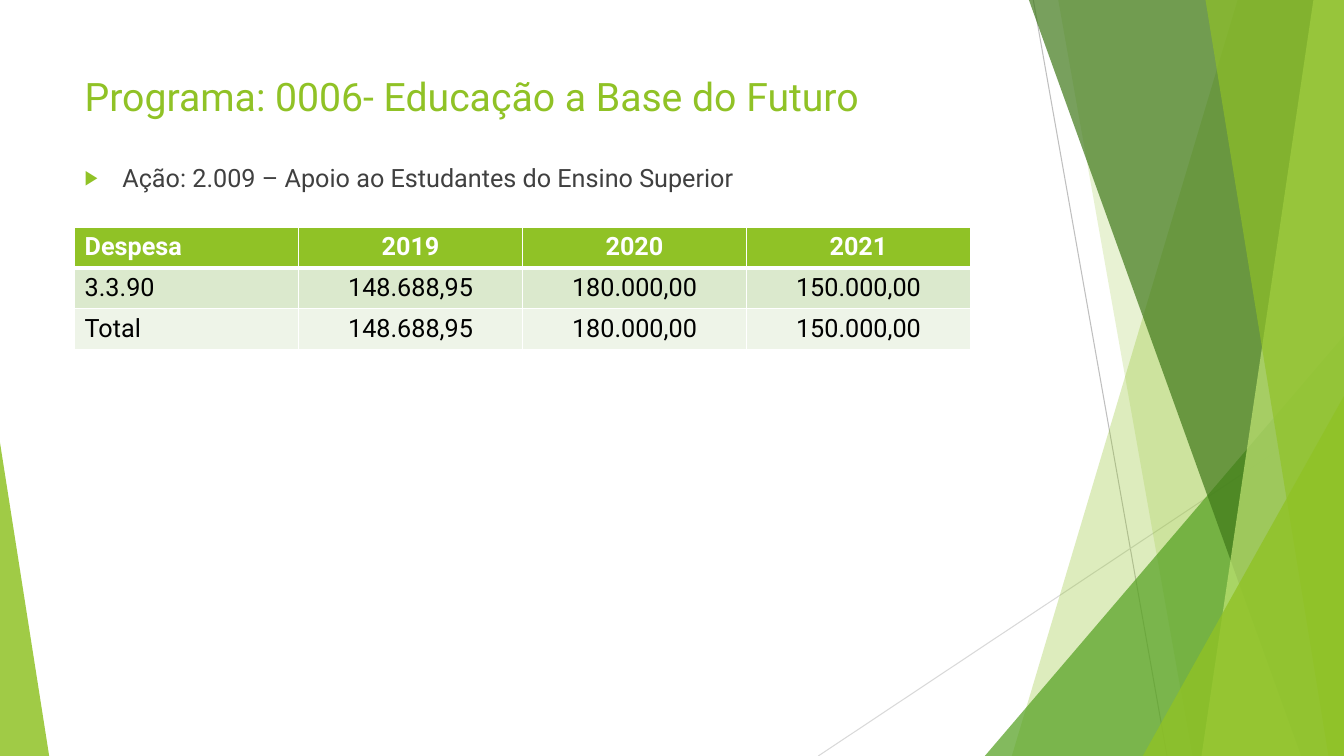
from dataclasses import dataclass
from lxml.etree import SubElement
from pptx import Presentation
from pptx.dml.color import RGBColor
from pptx.enum.shapes import MSO_CONNECTOR, MSO_SHAPE
from pptx.enum.text import MSO_ANCHOR, PP_ALIGN
from pptx.oxml.ns import qn
from pptx.util import Cm, Pt


@dataclass(frozen=True)
class Theme:
    font: str = "Roboto"
    lime: str = "90C226"
    leaf: str = "54A021"
    forest: str = "3F7819"
    pale: str = "C0E474"
    ink: str = "404040"
    black: str = "000000"
    white: str = "FFFFFF"
    band_dark: str = "DBE9CD"
    band_light: str = "EEF4E8"
    title_size: int = 28
    text_size: int = 18


def style_paragraph(para, size, color, bold=False, align=PP_ALIGN.LEFT):
    para.alignment = align
    para.font.name = theme.font
    para.font.size = Pt(size)
    para.font.bold = bold
    para.font.color.rgb = RGBColor.from_string(color)


theme = Theme()
WIDTH, HEIGHT = 33.87, 19.05
deck = Presentation()
deck.slide_width, deck.slide_height = Cm(WIDTH), Cm(HEIGHT)
page = deck.slides.add_slide(deck.slide_layouts[1])

for start_x, start_y, end_x, color in [
    (26.04, 0, 29.41, "BFBFBF"),
    (WIDTH, 10.24, 20.62, "D9D9D9"),
]:
    line = page.shapes.add_connector(
        MSO_CONNECTOR.STRAIGHT, Cm(start_x), Cm(start_y), Cm(end_x), Cm(HEIGHT)
    )
    line.line.color.rgb = RGBColor.from_string(color)
    line.line.width = Pt(0.75)
    SubElement(line._element.spPr, qn("a:effectLst"))

facets = [
    ("pane", (31.19, 25.5), theme.lime, 30),
    ("pane", (26.67, 30.05), theme.lime, 20),
    ("wedge", (24.82, 8.46, WIDTH, 1), theme.leaf, 72),
    ("pane", (25.93, 32.79), theme.forest, 70),
    ("pane", (33.1, 30.28), theme.pale, 70),
    ("pane", (30.38, 33.48), theme.lime, 65),
    ("wedge", (28.8, 9.98, WIDTH, 1), theme.lime, 80),
    ("wedge", (0, 11.15, 1.24, 0), theme.lime, 85),
]
for kind, outline, color, opacity in facets:
    if kind == "pane":
        top_x, bottom_x = outline
        builder = page.shapes.build_freeform(Cm(top_x), 0)
        corners = [(WIDTH, 0), (WIDTH, HEIGHT), (bottom_x, HEIGHT)]
        builder.add_line_segments([(Cm(x), Cm(y)) for x, y in corners], close=True)
        facet = builder.convert_to_shape()
    else:
        left, top, right, apex = outline
        facet = page.shapes.add_shape(
            MSO_SHAPE.ISOSCELES_TRIANGLE,
            Cm(left), Cm(top), Cm(right - left), Cm(HEIGHT - top),
        )
        facet.adjustments[0] = apex
    facet.shadow.inherit = False
    facet.line.fill.background()
    facet.fill.solid()
    facet.fill.fore_color.rgb = RGBColor.from_string(color)
    fill_color = facet._element.spPr.find(".//" + qn("a:srgbClr"))
    SubElement(fill_color, qn("a:alpha"), val=str(opacity * 1000))

title, body = page.shapes.title, page.placeholders[1]
for box, top, height, text, size, color in [
    (title, 1.7, 1.88, "Programa: 0006- Educação a Base do Futuro",
     theme.title_size, theme.lime),
    (body, 3.96, 12.8, "Ação: 2.009 – Apoio ao Estudantes do Ensino Superior",
     theme.text_size, theme.ink),
]:
    box.left, box.top, box.width, box.height = Cm(1.88), Cm(top), Cm(23.88), Cm(height)
    box.text_frame.text = text
    box.text_frame.vertical_anchor = MSO_ANCHOR.TOP
    style_paragraph(box.text_frame.paragraphs[0], size, color)

para = body.text_frame.paragraphs[0]
para.space_before = Pt(10)
bullet = para._p.get_or_add_pPr()
bullet.set("marL", str(Cm(0.95)))
bullet.set("indent", str(-Cm(0.95)))
SubElement(SubElement(bullet, qn("a:buClr")), qn("a:srgbClr"), val=theme.lime)
SubElement(bullet, qn("a:buSzPct"), val="80000")
SubElement(bullet, qn("a:buChar"), char="▶")

amounts = ["148.688,95", "180.000,00", "150.000,00"]
rows = [
    (["Despesa", "2019", "2020", "2021"], theme.lime, theme.white),
    (["3.3.90"] + amounts, theme.band_dark, theme.black),
    (["Total"] + amounts, theme.band_light, theme.black),
]
table = page.shapes.add_table(
    len(rows), 4, Cm(1.88), Cm(5.72), Cm(22.58), Cm(3.09)
).table
for row_index, (texts, fill, color) in enumerate(rows):
    for column_index, text in enumerate(texts):
        cell = table.cell(row_index, column_index)
        cell.text = text
        align = PP_ALIGN.CENTER if column_index else PP_ALIGN.LEFT
        style_paragraph(cell.text_frame.paragraphs[0], theme.text_size, color,
                        bold=row_index == 0, align=align)
        for side in ("lnL", "lnR", "lnT", "lnB"):
            under_header = (row_index, side) in [(0, "lnB"), (1, "lnT")]
            border = SubElement(cell._tc.get_or_add_tcPr(), qn("a:" + side),
                                w=str(Pt(3 if under_header else 1)))
            SubElement(SubElement(border, qn("a:solidFill")),
                       qn("a:srgbClr"), val=theme.white)
        cell.fill.solid()
        cell.fill.fore_color.rgb = RGBColor.from_string(fill)

deck.save("out.pptx")
